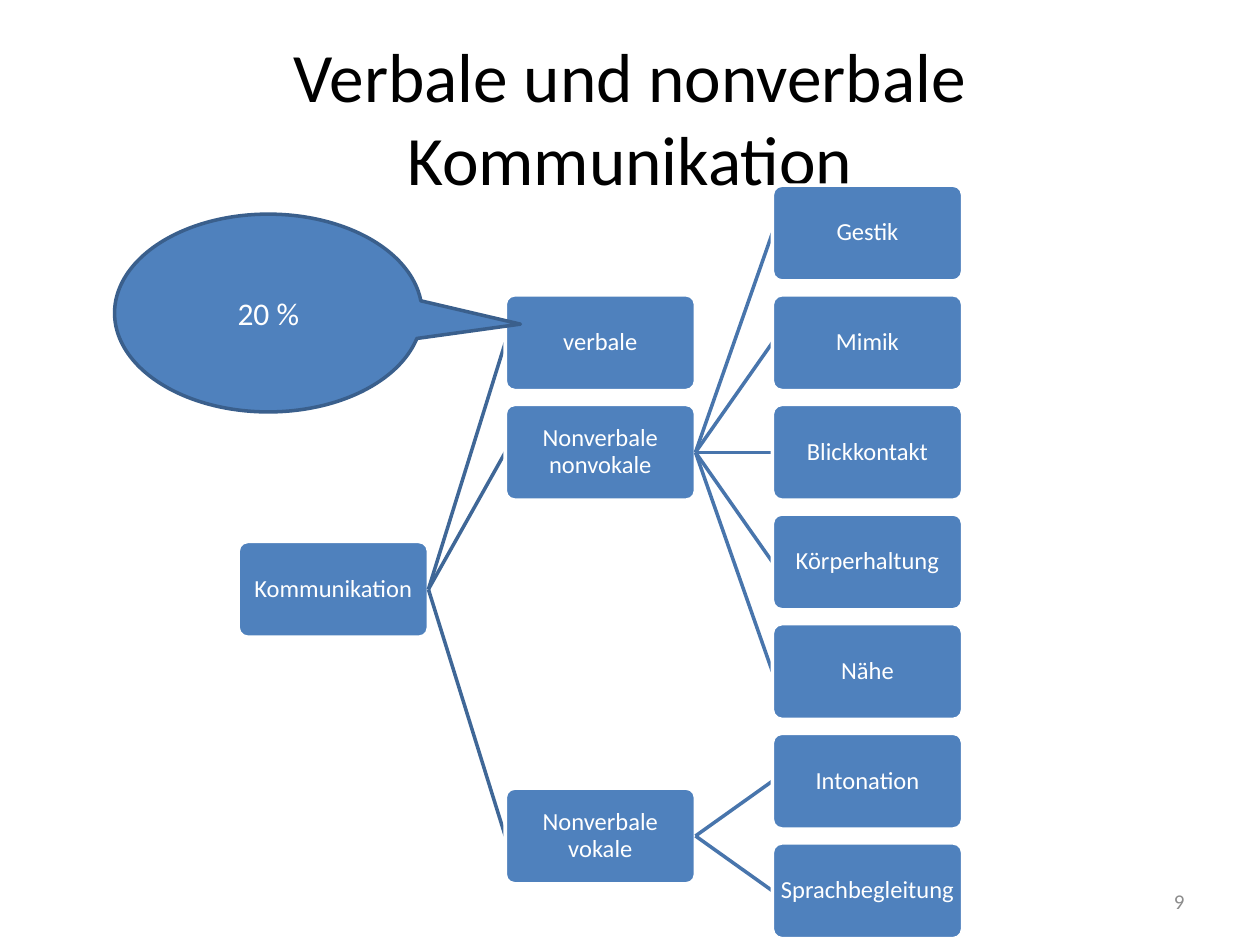
from lxml.etree import SubElement
from pptx import Presentation
from pptx.dml.color import RGBColor
from pptx.enum.shapes import MSO_CONNECTOR, MSO_SHAPE
from pptx.enum.text import MSO_ANCHOR, PP_ALIGN
from pptx.oxml.ns import qn
from pptx.util import Inches, Pt

COLORS = {
    "title": "000000",
    "number": "8C8C8C",
    "box": "4F81BD",
    "white": "FFFFFF",
    "callout_edge": "3A5F8C",
    "branch_0": "3F6797",
    "branch_1": "4875AC",
}
FONT = "Calibri"
LEFT, TOP = 1.89, 1.47
COLUMN_STEP, ROW_STEP = 2.12, 0.87
BOX_WIDTH, BOX_HEIGHT = 1.51, 0.76
RIGHT_SIDE, LEFT_SIDE = 3, 1

# A leaf holds its row; a branch holds its children.
TREE = ("Kommunikation", [
    ("verbale", 1),
    ("Nonverbale nonvokale", [
        ("Gestik", 0),
        ("Mimik", 1),
        ("Blickkontakt", 2),
        ("Körperhaltung", 3),
        ("Nähe", 4),
    ]),
    ("Nonverbale vokale", [
        ("Intonation", 5),
        ("Sprachbegleitung", 6),
    ]),
])


def rgb(name):
    return RGBColor.from_string(COLORS[name])


def write(shape, text, size, color, align=PP_ALIGN.CENTER):
    frame = shape.text_frame
    frame.text = text
    frame.word_wrap = True
    frame.vertical_anchor = MSO_ANCHOR.MIDDLE
    paragraph = frame.paragraphs[0]
    paragraph.alignment = align
    font = paragraph.runs[0].font
    font.name, font.size, font.color.rgb = FONT, Pt(size), rgb(color)


def add_label(slide, area, text, size, color, align):
    label = slide.shapes.add_textbox(*map(Inches, area))
    write(label, text, size, color, align)


def add_filled(slide, kind, area, edge):
    shape = slide.shapes.add_shape(kind, *map(Inches, area))
    shape.shadow.inherit = False
    shape.fill.solid()
    shape.fill.fore_color.rgb = rgb("box")
    shape.line.color.rgb = rgb(edge)
    shape.line.width = Pt(2)
    return shape


def add_box(slide, text, column, row):
    area = (LEFT + column * COLUMN_STEP, TOP + row * ROW_STEP, BOX_WIDTH, BOX_HEIGHT)
    box = add_filled(slide, MSO_SHAPE.ROUNDED_RECTANGLE, area, "white")
    box.adjustments[0] = 0.1
    write(box, text, 14, "white")
    frame = box.text_frame
    frame.margin_left = frame.margin_right = Inches(0.01)
    frame.margin_top = frame.margin_bottom = Inches(0.01)
    frame.paragraphs[0].line_spacing = 0.9
    return box


def add_branch(slide, color):
    branch = slide.shapes.add_connector(MSO_CONNECTOR.STRAIGHT, 0, 0, 0, 0)
    branch.line.color.rgb = rgb(color)
    branch.line.width = Pt(2)
    SubElement(branch._element.spPr, qn("a:effectLst"))
    return branch


def row_of(content):
    """A branch stands midway between its first and last child."""
    if isinstance(content, list):
        return (row_of(content[0][1]) + row_of(content[-1][1])) / 2
    return content


def add_tree(slide, node, column=0):
    """Draw each branch above its parent's box and below its child's."""
    text, content = node
    box = add_box(slide, text, column, row_of(content))
    for child in content if isinstance(content, list) else []:
        branch = add_branch(slide, f"branch_{column}")
        child_box = add_tree(slide, child, column + 1)
        branch.begin_connect(box, RIGHT_SIDE)
        branch.end_connect(child_box, LEFT_SIDE)
    return box


def add_callout(slide, text):
    callout = add_filled(slide, MSO_SHAPE.OVAL_CALLOUT, (0.91, 1.7, 2.44, 1.57), "callout_edge")
    callout.adjustments[0] = 0.82
    callout.adjustments[1] = 0.056
    write(callout, text, 18, "white")


def main():
    deck = Presentation()
    deck.slide_width, deck.slide_height = Inches(10), Inches(7.5)
    slide = deck.slides.add_slide(deck.slide_layouts[6])
    add_label(slide, (0.5, 0.3, 9, 1.25), "Verbale und nonverbale Kommunikation",
              39.6, "title", PP_ALIGN.CENTER)
    add_label(slide, (7.17, 6.95, 2.33, 0.4), "9", 12, "number", PP_ALIGN.RIGHT)
    add_tree(slide, TREE)
    add_callout(slide, "20 %")
    deck.save("out.pptx")


if __name__ == "__main__":
    main()
